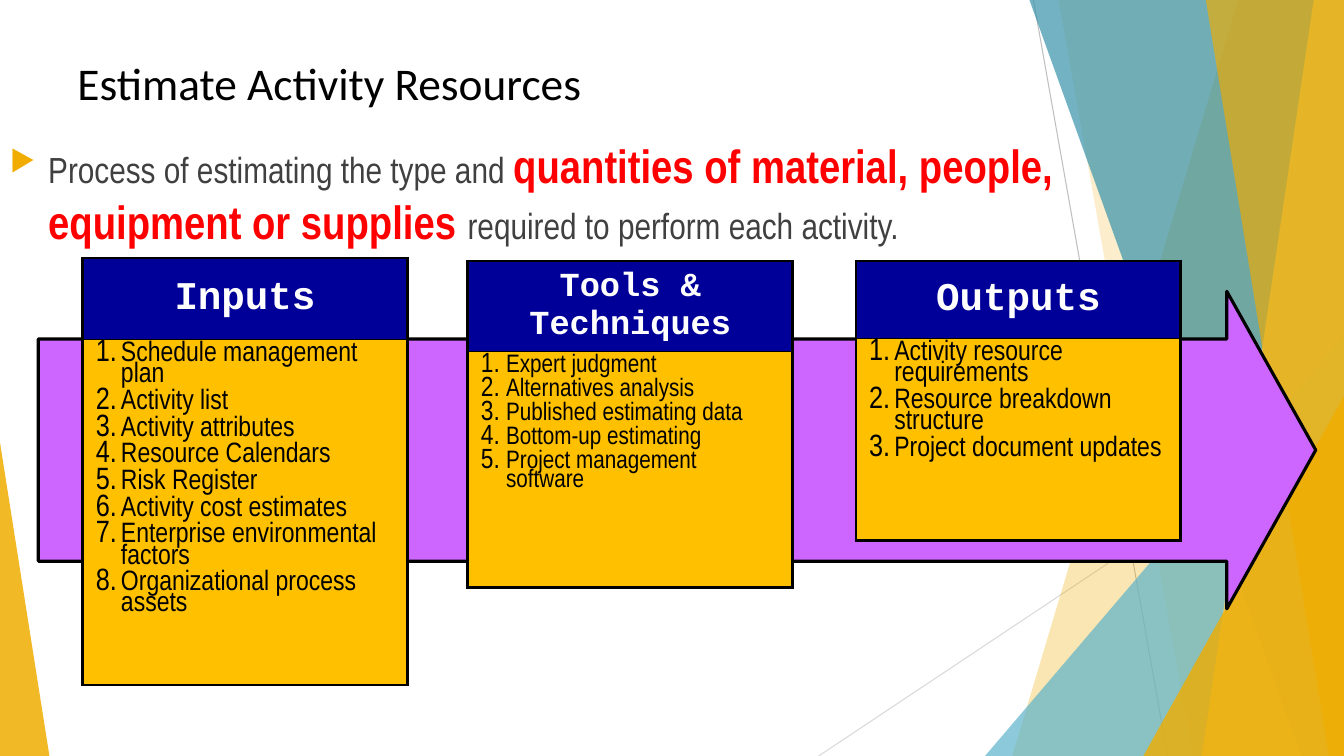
from lxml.etree import SubElement
from pptx import Presentation
from pptx.dml.color import RGBColor
from pptx.enum.shapes import MSO_CONNECTOR as Connector, MSO_SHAPE as Preset
from pptx.enum.text import MSO_ANCHOR as Anchor, PP_ALIGN as Align
from pptx.oxml.ns import qn
from pptx.util import Inches, Pt

WHITE = RGBColor(0xFF, 0xFF, 0xFF)
BLACK = RGBColor(0, 0, 0)
RED = RGBColor(0xFF, 0, 0)
CHARCOAL = RGBColor(0x40, 0x40, 0x40)
SILVER = RGBColor(0xBF, 0xBF, 0xBF)
PALE_GRAY = RGBColor(0xD9, 0xD9, 0xD9)
GOLD = RGBColor(0xF0, 0xAD, 0x00)
LIGHT_GOLD = RGBColor(0xFF, 0xD2, 0x5D)
AMBER = RGBColor(0xFF, 0xC0, 0x00)
SKY = RGBColor(0x60, 0xB5, 0xCC)
TEAL = RGBColor(0x37, 0x92, 0xAA)
PURPLE = RGBColor(0xCC, 0x66, 0xFF)
NAVY = RGBColor(0x00, 0x00, 0x99)

WIDTH, HEIGHT = 13.33, 7.5
NARROW = "Arial Narrow"
CARD_WIDTH = 3.22

CARDS = [
    ("Inputs", 28, 20, 0.82, 2.56, (0.81, 3.37), 2.25, [
        "Schedule management plan", "Activity list", "Activity attributes",
        "Resource Calendars", "Risk Register", "Activity cost estimates",
        "Enterprise environmental factors", "Organizational process assets"]),
    ("Tools & Techniques", 24, 18, 4.64, 2.59, (0.86, 2.34), 1, [
        "Expert judgment", "Alternatives analysis", "Published estimating data",
        "Bottom-up estimating", "Project management software"]),
    ("Outputs", 28, 20, 8.49, 2.59, (0.77, 2), 2.25, [
        "Activity resource requirements", "Resource breakdown structure",
        "Project document updates"]),
]


def paint(shape, color, opacity=100):
    shape.shadow.inherit = False
    shape.fill.solid()
    shape.fill.fore_color.rgb = color
    shape.line.fill.background()
    if opacity < 100:
        tint = shape.fill._xPr.find(qn("a:solidFill"))[0]
        SubElement(tint, qn("a:alpha"), val=str(opacity * 1000))


def add_line(page, start, end, color):
    line = page.shapes.add_connector(
        Connector.STRAIGHT, *[Inches(value) for value in start + end])
    line.line.color.rgb = color
    line.line.width = Pt(0.75)
    SubElement(line._element.spPr, qn("a:effectLst"))


def add_panel(page, top_left, top_right, bottom_right, bottom_left, color, opacity):
    corners = [(top_right, 0), (bottom_right, HEIGHT), (bottom_left, HEIGHT)]
    builder = page.shapes.build_freeform(Inches(top_left), 0)
    builder.add_line_segments([(Inches(x), Inches(y)) for x, y in corners])
    paint(builder.convert_to_shape(), color, opacity)


def add_preset(page, preset, left, top, width, height, adjustments, color, opacity=100):
    shape = page.shapes.add_shape(
        preset, Inches(left), Inches(top), Inches(width), Inches(height))
    for index, value in enumerate(adjustments):
        shape.adjustments[index] = value
    paint(shape, color, opacity)
    return shape


def add_span(para, text, size, font, color, bold=False):
    span = para.add_run()
    span.text = text
    span.font.size = Pt(size)
    span.font.name = font
    span.font.color.rgb = color
    span.font.bold = bold


def add_text(page, left, top, width, height):
    box = page.shapes.add_textbox(
        Inches(left), Inches(top), Inches(width), Inches(height))
    box.text_frame.word_wrap = True
    return box.text_frame.paragraphs[0]


def set_bullet(para, indent, percent, tag, color=None, **attributes):
    props = para._p.get_or_add_pPr()
    props.set("marL", str(Inches(indent)))
    props.set("indent", str(-Inches(indent)))
    if color is not None:
        SubElement(SubElement(props, qn("a:buClr")), qn("a:srgbClr"), val=str(color))
    SubElement(props, qn("a:buSzPct"), val=str(percent * 1000))
    SubElement(props, qn(tag), **attributes)


def style_cell(cell, color, top, bottom):
    cell.margin_left = cell.margin_right = Inches(0.13)
    cell.margin_top = cell.margin_bottom = Inches(0.05)
    props = cell._tc.get_or_add_tcPr()
    for side, width in (("L", 2.25), ("R", 2.25), ("T", top), ("B", bottom)):
        border = SubElement(props, qn(f"a:ln{side}"), w=str(Pt(width)))
        SubElement(SubElement(border, qn("a:solidFill")), qn("a:srgbClr"), val=str(BLACK))
    cell.fill.solid()
    cell.fill.fore_color.rgb = color


def add_card(page, heading, heading_size, item_size, left, top, rows, top_border, items):
    table = page.shapes.add_table(
        2, 1, Inches(left), Inches(top), Inches(CARD_WIDTH), Inches(sum(rows))).table
    table.first_row = table.horz_banding = False
    for row, height in zip(table.rows, rows):
        row.height = Inches(height)

    header, body = table.cell(0, 0), table.cell(1, 0)
    style_cell(header, NAVY, top_border, 1)
    style_cell(body, AMBER, 1, 2.25)
    header.vertical_anchor = Anchor.MIDDLE
    para = header.text_frame.paragraphs[0]
    para.alignment = Align.CENTER
    add_span(para, heading, heading_size, "Courier New", WHITE, True)

    frame = body.text_frame
    for index, item in enumerate(items):
        para = frame.add_paragraph() if index else frame.paragraphs[0]
        para.line_spacing = 0.8
        para.space_before = Pt(item_size * 0.2)
        set_bullet(para, 0.25, 110, "a:buAutoNum", type="arabicPeriod")
        add_span(para, item, item_size, NARROW, BLACK)


def add_backdrop(page):
    add_line(page, (10.25, 0), (11.58, HEIGHT), SILVER)
    add_line(page, (WIDTH, 4.03), (8.12, HEIGHT), PALE_GRAY)
    add_panel(page, 12.28, WIDTH, WIDTH, 10.04, GOLD, 30)
    add_panel(page, 10.5, WIDTH, WIDTH, 11.83, GOLD, 20)
    add_preset(page, Preset.ISOSCELES_TRIANGLE, 9.77, 3.33, 3.56, 4.17, [1], SKY, 72)
    add_panel(page, 10.21, WIDTH, WIDTH, 12.91, TEAL, 70)
    add_panel(page, 13.03, WIDTH, WIDTH, 11.92, LIGHT_GOLD, 70)
    add_panel(page, 11.96, WIDTH, WIDTH, 13.18, GOLD, 65)
    add_preset(page, Preset.ISOSCELES_TRIANGLE, 11.34, 3.93, 1.99, 3.57, [1], GOLD, 80)
    add_preset(page, Preset.ISOSCELES_TRIANGLE, 0, 4.39, 0.49, 3.11, [0], GOLD, 85)


def main():
    deck = Presentation()
    deck.slide_width, deck.slide_height = Inches(WIDTH), Inches(HEIGHT)
    page = deck.slides.add_slide(deck.slide_layouts[6])
    add_backdrop(page)

    title = add_text(page, 0.67, 0.5, 11.11, 0.5)
    add_span(title, "Estimate Activity Resources", 32.4, "Calibri", BLACK)

    summary = add_text(page, 0, 1.31, 11.11, 1.08)
    summary.space_before = Pt(10)
    set_bullet(summary, 0.38, 80, "a:buChar", GOLD, char="▶")
    add_span(summary, "Process of estimating the type and ", 25.9, NARROW, CHARCOAL)
    add_span(summary, "quantities of material, people, equipment or supplies ",
             33.3, NARROW, RED, True)
    add_span(summary, "required to perform each activity.", 25.9, NARROW, CHARCOAL)

    arrow = add_preset(page, Preset.RIGHT_ARROW, 0.38, 2.89, 12.67, 3.15,
                       [0.7, 0.28], PURPLE)
    arrow.line.color.rgb = BLACK
    arrow.line.width = Pt(2.25)
    for card in CARDS:
        add_card(page, *card)
    deck.save("out.pptx")


if __name__ == "__main__":
    main()
